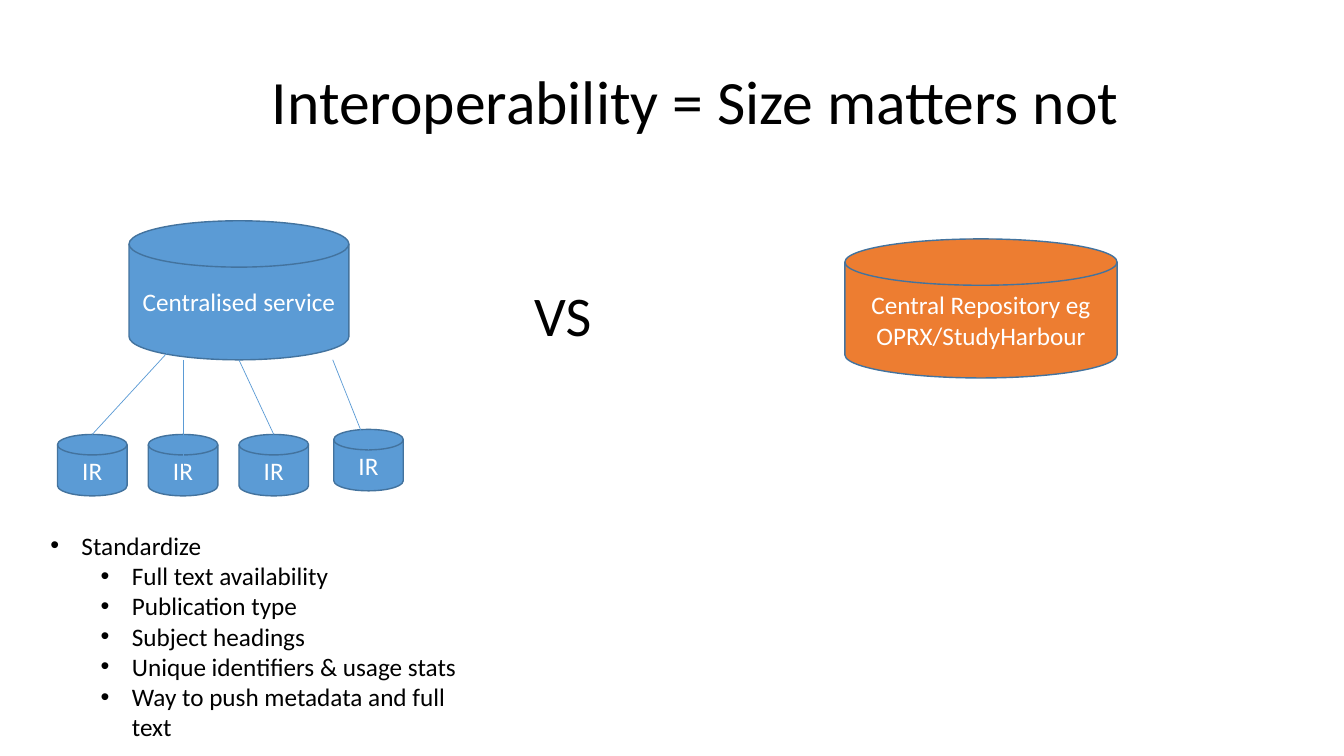
from lxml import etree
from pptx import Presentation
from pptx.dml.color import RGBColor
from pptx.enum.shapes import MSO_CONNECTOR, MSO_SHAPE
from pptx.enum.text import MSO_ANCHOR, MSO_AUTO_SIZE, PP_ALIGN
from pptx.oxml.ns import qn
from pptx.util import Inches, Pt

DISK = MSO_SHAPE.FLOWCHART_MAGNETIC_DISK
STRAIGHT = MSO_CONNECTOR.STRAIGHT
MIDDLE, TOP = MSO_ANCHOR.MIDDLE, MSO_ANCHOR.TOP
CENTER, LEFT = PP_ALIGN.CENTER, PP_ALIGN.LEFT
NO_FIT = MSO_AUTO_SIZE.NONE

# Content
TITLE = "Interoperability = Size matters not"
SERVICE = "Centralised service"
RIVAL = "Central Repository eg OPRX/StudyHarbour"
REPOSITORIES = ["IR"] * 4
STANDARDS = [
    (0, "Standardize"),
    (1, "Full text availability"),
    (1, "Publication type"),
    (1, "Subject headings"),
    (1, "Unique identifiers & usage stats"),
    (1, "Way to push metadata and full text"),
]

FONT = "Calibri"
BLACK, WHITE = "000000", "FFFFFF"
BLUE, ORANGE, OUTLINE = "5B9BD5", "ED7D31", "43739E"

# Layout in inches: left, top, width, height
SLIDE_SIZE = (13.33, 7.5)
TITLE_BOX = (0.17, 0.31, 13.46, 1.45)
SERVICE_BOX = (1.28, 2.19, 2.18, 1.38)
RIVAL_BOX = (8.38, 2.37, 2.7, 1.38)
VERSUS_BOX = (5.2, 2.73, 0.81, 0.77)
STANDARDS_BOX = (0.4, 5.21, 4.28, 2.22)
REPOSITORY_LEFT, REPOSITORY_TOP, REPOSITORY_PITCH = 0.57, 4.31, 0.9
REPOSITORY_SIZE = (0.69, 0.61)
LAST_SHIFT = (0.04, -0.05)
BULLET_INDENT, LEVEL_STEP = 0.31, 0.5


def rgb(color):
    return RGBColor.from_string(color)


def inches(values):
    return [Inches(value) for value in values]


def write(shape, paragraphs, size, color=BLACK, align=LEFT, anchor=TOP, wrap=True):
    frame = shape.text_frame
    settings = {"word_wrap": wrap, "vertical_anchor": anchor, "auto_size": NO_FIT}
    for name, value in settings.items():
        setattr(frame, name, value)
    for index, text in enumerate(paragraphs):
        paragraph = frame.add_paragraph() if index else frame.paragraphs[0]
        paragraph.alignment = align
        run = paragraph.add_run()
        run.text = text
        for name, value in {"name": FONT, "size": Pt(size)}.items():
            setattr(run.font, name, value)
        run.font.color.rgb = rgb(color)
    return frame


def add_bullet(paragraph, level):
    paragraph.level = level
    properties = paragraph._p.get_or_add_pPr()
    properties.set("marL", str(Inches(BULLET_INDENT + level * LEVEL_STEP)))
    properties.set("indent", str(-Inches(BULLET_INDENT)))
    etree.SubElement(properties, qn("a:buFont")).set("typeface", "Arial")
    etree.SubElement(properties, qn("a:buChar")).set("char", "•")


def add_disk(slide, box, text, fill=BLUE):
    disk = slide.shapes.add_shape(DISK, *inches(box))
    disk.shadow.inherit = False
    disk.fill.solid()
    disk.fill.fore_color.rgb = rgb(fill)
    disk.line.color.rgb = rgb(OUTLINE)
    disk.line.width = Pt(1)
    write(disk, [text], 18, WHITE, CENTER, MIDDLE)


def add_link(slide, start, end, arrow):
    link = slide.shapes.add_connector(STRAIGHT, *inches(start + end))
    link.line.color.rgb = rgb(BLUE)
    link.line.width = Pt(0.5)
    if arrow:
        etree.SubElement(link.line._ln, qn("a:tailEnd")).set("type", "triangle")
    etree.SubElement(link._element.spPr, qn("a:effectLst"))


def main():
    deck = Presentation()
    deck.slide_width, deck.slide_height = inches(SLIDE_SIZE)
    slide = deck.slides.add_slide(deck.slide_layouts[5])

    title = slide.shapes.title
    for name, value in zip(("left", "top", "width", "height"), inches(TITLE_BOX)):
        setattr(title, name, value)
    frame = write(title, [TITLE], 44, align=CENTER, anchor=MIDDLE)
    frame.paragraphs[0].line_spacing = 0.9

    width, height = REPOSITORY_SIZE
    centers = []
    for index, label in enumerate(REPOSITORIES):
        last = index == len(REPOSITORIES) - 1
        shift_x, shift_y = LAST_SHIFT if last else (0, 0)
        left = REPOSITORY_LEFT + index * REPOSITORY_PITCH + shift_x
        add_disk(slide, (left, REPOSITORY_TOP + shift_y, width, height), label)
        centers.append(left + width / 2)
    add_disk(slide, SERVICE_BOX, SERVICE)

    service_left, service_top, service_width, service_height = SERVICE_BOX
    service_bottom = service_top + service_height
    links = [
        ((centers[0], REPOSITORY_TOP), (centers[1], 3.33), True),
        ((centers[1], service_bottom), (centers[1], 4.65), False),
        ((service_left + service_width / 2, service_bottom),
         (centers[2], REPOSITORY_TOP), False),
        ((3.3, service_bottom), (centers[3], 4.46), False),
    ]
    for start, end, arrow in links:
        add_link(slide, start, end, arrow)

    add_disk(slide, RIVAL_BOX, RIVAL, ORANGE)
    write(slide.shapes.add_textbox(*inches(VERSUS_BOX)), ["VS"], 40, wrap=False)

    standards = slide.shapes.add_textbox(*inches(STANDARDS_BOX))
    frame = write(standards, [text for _, text in STANDARDS], 18)
    for paragraph, (level, _) in zip(frame.paragraphs, STANDARDS):
        add_bullet(paragraph, level)

    deck.save("out.pptx")


if __name__ == "__main__":
    main()
